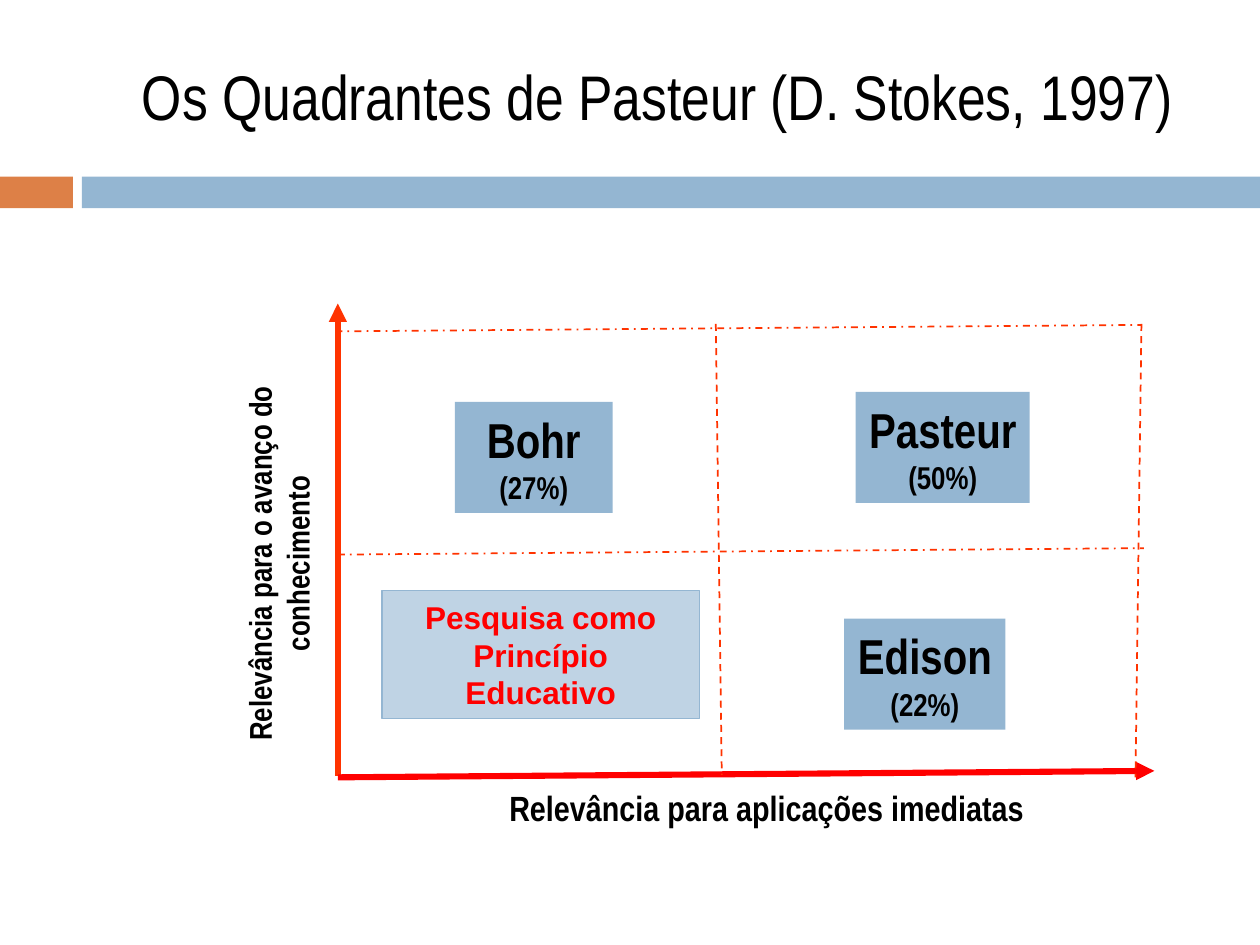
from dataclasses import dataclass
from typing import Optional

from lxml import etree
from pptx import Presentation
from pptx.dml.color import RGBColor
from pptx.enum import dml, shapes, text
from pptx.oxml import ns
from pptx.util import Cm, Pt

BLACK = RGBColor(0x00, 0x00, 0x00)
RED = RGBColor(0xFF, 0x00, 0x00)
FLAME = RGBColor(0xFF, 0x33, 0x00)
ORANGE = RGBColor(0xDD, 0x80, 0x47)
BLUE = RGBColor(0x94, 0xB6, 0xD2)
PALE = RGBColor(0xBF, 0xD3, 0xE4)
NARROW = "Arial Narrow"
DASH = dml.MSO_LINE.DASH
DOTTED = dml.MSO_LINE.DASH_DOT


@dataclass
class Line:
    start: tuple
    end: tuple
    color: RGBColor = FLAME
    width: float = 1
    dash: Optional[int] = None
    arrow: bool = False


@dataclass
class Box:
    at: tuple
    rows: tuple = ()  # (words, size) for each paragraph
    fill: Optional[RGBColor] = None
    edge: Optional[RGBColor] = None
    color: RGBColor = BLACK
    font: str = NARROW
    bold: bool = True
    wrap: bool = False
    turn: int = 0


def draw_line(slide, line: Line) -> None:
    ends = [Cm(v) for v in line.start + line.end]
    link = slide.shapes.add_connector(shapes.MSO_CONNECTOR.STRAIGHT, *ends)
    link.line.color.rgb = line.color
    link.line.width = Pt(line.width)
    if line.dash:
        link.line.dash_style = line.dash
    if line.arrow:
        etree.SubElement(link.line._get_or_add_ln(), ns.qn("a:headEnd"), type="triangle")
    etree.SubElement(link._element.spPr, ns.qn("a:effectLst"))


def draw_box(slide, box: Box) -> None:
    place = [Cm(v) for v in box.at]
    if box.fill is None:
        shape = slide.shapes.add_textbox(*place)
    else:
        shape = slide.shapes.add_shape(shapes.MSO_SHAPE.RECTANGLE, *place)
        shape.shadow.inherit = False
        shape.fill.solid()
        shape.fill.fore_color.rgb = box.fill
        if box.edge is None:
            shape.line.fill.background()
        else:
            shape.line.color.rgb = box.edge
            shape.line.width = Pt(0.75)
    shape.rotation = box.turn
    frame = shape.text_frame
    frame.word_wrap = box.wrap
    frame.vertical_anchor = text.MSO_ANCHOR.MIDDLE
    for i, (words, size) in enumerate(box.rows):
        para = frame.add_paragraph() if i else frame.paragraphs[0]
        para.alignment = text.PP_ALIGN.CENTER
        run = para.add_run()
        run.text = words
        style = {"name": box.font, "size": Pt(size), "bold": box.bold}
        for key, value in style.items():
            setattr(run.font, key, value)
        run.font.color.rgb = box.color


# Title and bars
HEAD = [
    Box((0, 3.56, 1.47, 0.64), fill=ORANGE),
    Box((1.65, 3.56, 23.75, 0.64), fill=BLUE),
    Box((1.7, 0.33, 23.11, 3.18), (("Os Quadrantes de Pasteur (D. Stokes, 1997)", 36),),
        bold=False, wrap=True),
]

# Axes and quadrant borders
LINES = [
    Line((6.81, 6.12), (6.81, 15.65), width=3.5, arrow=True),
    Line((23.27, 15.54), (6.81, 15.67), RED, 3.5, arrow=True),
    Line((6.81, 11.18), (23.06, 11.05), dash=DOTTED),
    Line((14.43, 6.53), (14.55, 15.62), dash=DASH),
    Line((6.76, 6.68), (23.01, 6.55), dash=DOTTED),
    Line((23.01, 6.53), (22.89, 15.67), dash=DASH),
]

# Quadrants: name, share, left, top, width
QUADS = [
    ("Pasteur", "(50%)", 17.25, 7.9, 3.51),
    ("Edison", "(22%)", 17.02, 12.47, 3.25),
    ("Bohr", "(27%)", 9.17, 8.1, 3.18),
]

# Axis labels and the fourth quadrant
LABELS = [
    Box((9.98, 15.72, 10.95, 1.12), (("Relevância para aplicações imediatas", 20),)),
    Box((0.76, 10.46, 9.7, 1.8), (("Relevância para o avanço do conhecimento", 18),),
        wrap=True, turn=270),
    Box((7.7, 11.91, 6.4, 2.57), (("Pesquisa como Princípio Educativo", 18),),
        PALE, BLUE, RED, "Arial", wrap=True),
]


def main() -> None:
    deck = Presentation()
    deck.slide_width, deck.slide_height = Cm(25.4), Cm(19.05)
    slide = deck.slides.add_slide(deck.slide_layouts[6])
    for box in HEAD:
        draw_box(slide, box)
    for line in LINES:
        draw_line(slide, line)
    for name, share, left, top, width in QUADS:
        draw_box(slide, Box((left, top, width, 2.24), ((name, 28), (share, 18)), BLUE))
    for box in LABELS:
        draw_box(slide, box)
    deck.save("out.pptx")


if __name__ == "__main__":
    main()
